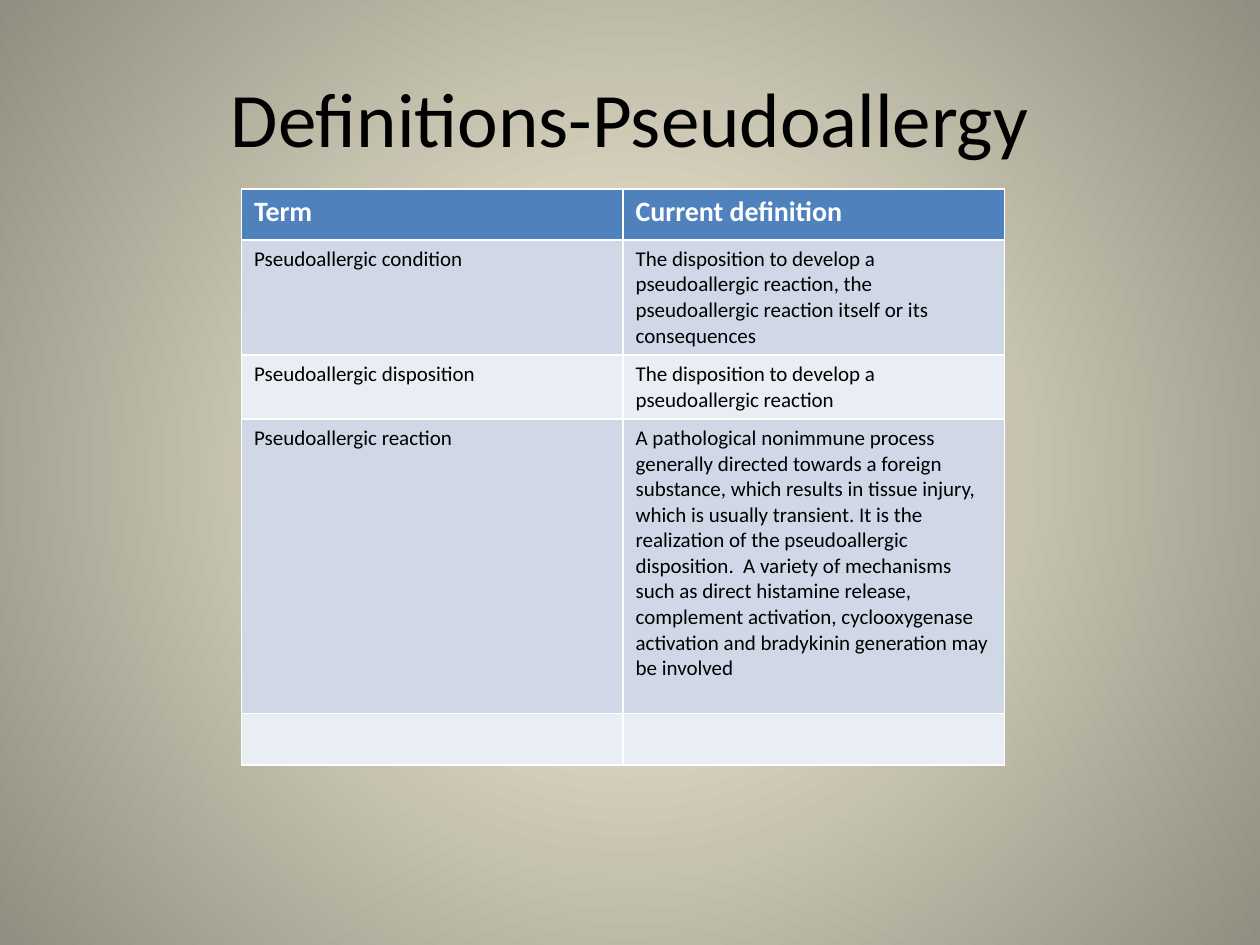
"""Build a slide with a table of pseudoallergy definitions."""
from dataclasses import dataclass

from lxml import etree
from pptx import Presentation
from pptx.dml.color import RGBColor
from pptx.enum.text import MSO_ANCHOR, PP_ALIGN
from pptx.oxml.ns import qn
from pptx.util import Cm, Pt

CENTER = PP_ALIGN.CENTER
MIDDLE = MSO_ANCHOR.MIDDLE
TITLE_ONLY = 5
FONT = "Calibri"
BLACK, WHITE = "000000", "FFFFFF"
HEADER_FILL = "4F81BD"
BAND_FILLS = ("D0D8E8", "E9EDF4")
COLUMN_WIDTH = Cm(7.69)


@dataclass
class Definition:
    term: str
    meaning: str
    height: float


HEADER = Definition("Term", "Current definition", 1.03)
DEFINITIONS = [
    Definition(
        "Pseudoallergic condition",
        "The disposition to develop a pseudoallergic reaction, the "
        "pseudoallergic reaction itself or its consequences",
        2.32,
    ),
    Definition(
        "Pseudoallergic disposition",
        "The disposition to develop a pseudoallergic reaction",
        1.29,
    ),
    Definition(
        "Pseudoallergic reaction",
        "A pathological nonimmune process generally directed towards a foreign "
        "substance, which results in tissue injury, which is usually transient. "
        "It is the realization of the pseudoallergic disposition.  A variety of "
        "mechanisms such as direct histamine release, complement activation, "
        "cyclooxygenase activation and bradykinin generation may be involved",
        5.93,
    ),
    Definition("", "", 1.04),
]


def color(value: str) -> RGBColor:
    return RGBColor.from_string(value)


def format_paragraph(paragraph, size: float, text_color: str, bold: bool = False) -> None:
    font = paragraph.font
    font.name, font.size, font.bold = FONT, Pt(size), bold
    font.color.rgb = color(text_color)


def set_radial_background(slide, inner: str, outer: str) -> None:
    fill = slide.background.fill
    fill.gradient()
    for stop, value in zip(fill.gradient_stops, (inner, outer)):
        stop.color.rgb = color(value)
    linear = next(slide.element.iter(qn("a:lin")))
    radial = etree.Element(qn("a:path"), {"path": "circle"})
    etree.SubElement(radial, qn("a:fillToRect"), {side: "50000" for side in "ltrb"})
    linear.getparent().replace(linear, radial)


def add_title(slide, text: str) -> None:
    title = slide.shapes.title
    title.left, title.top, title.width, title.height = Cm(1.27), Cm(0.76), Cm(22.86), Cm(3.18)
    title.text_frame.text = text
    title.text_frame.vertical_anchor = MIDDLE
    paragraph = title.text_frame.paragraphs[0]
    paragraph.alignment = CENTER
    format_paragraph(paragraph, 44, BLACK)


def fill_row(table, index: int, definition: Definition) -> None:
    is_header = index == 0
    table.rows[index].height = Cm(definition.height)
    for cell, text in zip(table.rows[index].cells, (definition.term, definition.meaning)):
        cell.fill.solid()
        cell.fill.fore_color.rgb = color(HEADER_FILL if is_header else BAND_FILLS[(index - 1) % 2])
        cell.text = text
        paragraph = cell.text_frame.paragraphs[0]
        format_paragraph(paragraph, 16 if is_header else 12, WHITE if is_header else BLACK, is_header)


def add_definitions(slide, definitions: list[Definition]) -> None:
    height = Cm(sum(definition.height for definition in definitions))
    frame = slide.shapes.add_table(len(definitions), 2, Cm(4.87), Cm(3.81), 2 * COLUMN_WIDTH, height)
    for index, definition in enumerate(definitions):
        fill_row(frame.table, index, definition)


def main() -> None:
    presentation = Presentation()
    presentation.slide_width, presentation.slide_height = Cm(25.4), Cm(19.05)
    slide = presentation.slides.add_slide(presentation.slide_layouts[TITLE_ONLY])
    set_radial_background(slide, "FCF7DD", "918E81")
    add_title(slide, "Definitions-Pseudoallergy")
    add_definitions(slide, [HEADER, *DEFINITIONS])
    presentation.save("out.pptx")


if __name__ == "__main__":
    main()
